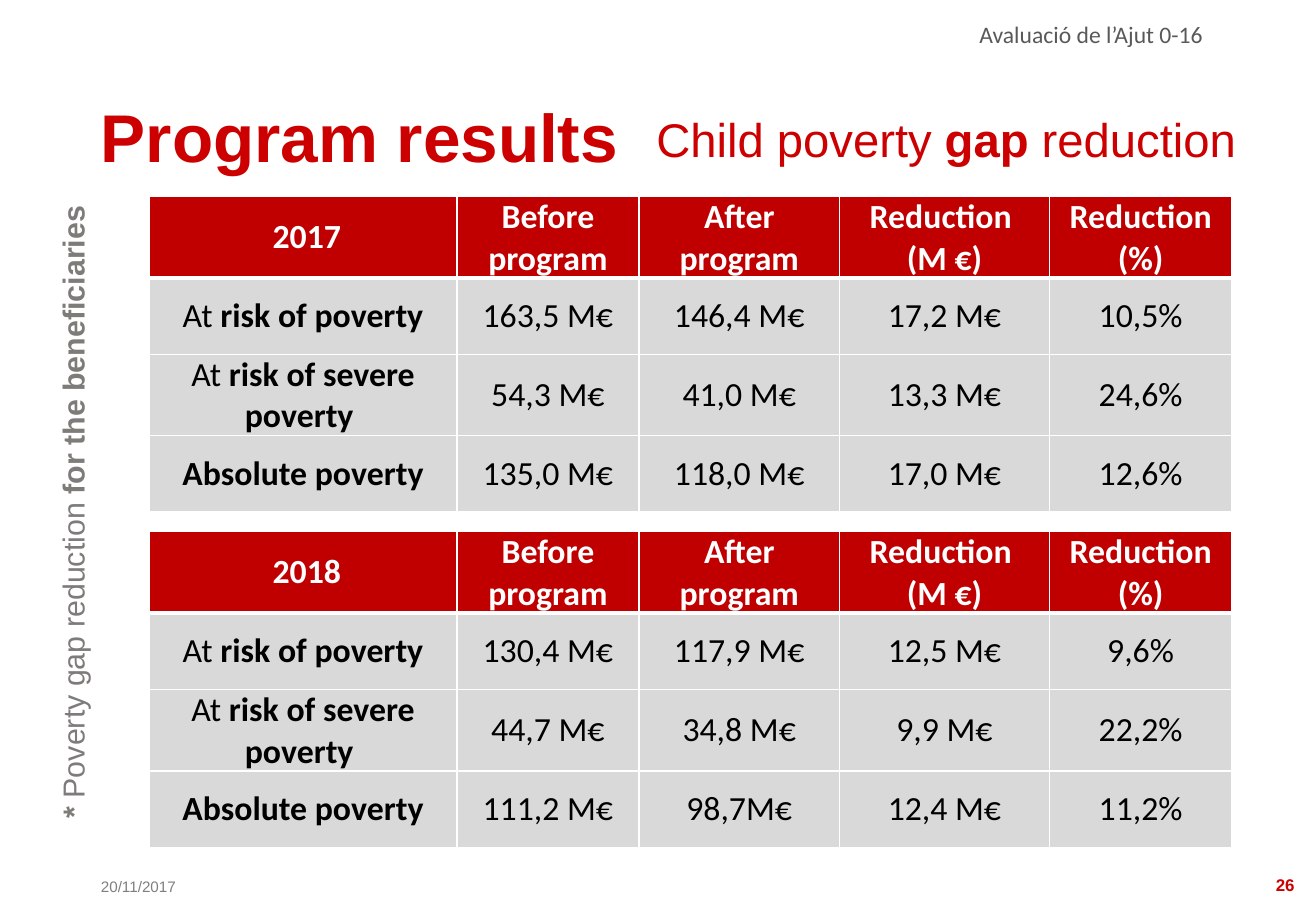
from lxml.etree import SubElement
from pptx import Presentation
from pptx.dml.color import RGBColor
from pptx.enum.shapes import MSO_SHAPE
from pptx.enum.text import MSO_ANCHOR, PP_ALIGN
from pptx.oxml.ns import qn
from pptx.util import Cm, Pt

RED, DARK_RED, LIGHT_GREY = "CC0000", "C00000", "D9D9D9"
WHITE, BLACK = "FFFFFF", "000000"

COLUMN_WIDTHS = (6.43, 3.81, 4.19, 4.39, 3.81)
ROW_HEIGHTS = (1.7, 1.6, 1.7, 1.6)
COLUMN_TITLES = ("Before program", "After program", "Reduction \n(M €)", "Reduction (%)")
# Each row label is a list of (text, bold) pieces
ROW_LABELS = (
    [("At ", False), ("risk of poverty", True)],
    [("At ", False), ("risk of severe poverty ", True)],
    [("Absolute poverty", True)],
)
RESULTS = {
    " 2017": (
        ("163,5 M€", "146,4 M€", "17,2 M€", "10,5%"),
        ("54,3 M€", "41,0 M€", "13,3 M€", "24,6%"),
        ("135,0 M€", "118,0 M€", "17,0 M€", "12,6%"),
    ),
    " 2018": (
        ("130,4 M€", "117,9 M€", "12,5 M€", "9,6%"),
        ("44,7 M€", "34,8 M€", "9,9 M€", "22,2%"),
        ("111,2 M€", "98,7M€", "12,4 M€", "11,2%"),
    ),
}


def color(hex_value):
    return RGBColor.from_string(hex_value)


def write_paragraph(paragraph, pieces, size, hex_value, font, align):
    paragraph.alignment = align
    for text, bold in pieces:
        run = paragraph.add_run()
        run.text = text
        run.font.name = font
        run.font.size = Pt(size)
        run.font.bold = bold
        run.font.color.rgb = color(hex_value)


def set_frame(frame, insets, anchor):
    frame.word_wrap = True
    frame.vertical_anchor = anchor
    (frame.margin_left, frame.margin_top,
     frame.margin_right, frame.margin_bottom) = map(Cm, insets)


def add_label(slide, box, pieces, size, hex_value, font="Arial", align=PP_ALIGN.LEFT,
              insets=(0, 0.13, 0.25, 0.13), anchor=MSO_ANCHOR.TOP):
    label = slide.shapes.add_textbox(*map(Cm, box))
    set_frame(label.text_frame, insets, anchor)
    write_paragraph(label.text_frame.paragraphs[0], pieces, size, hex_value, font, align)
    return label


def add_heading(slide, box, pieces, size, top_inset):
    heading = slide.shapes.add_shape(MSO_SHAPE.RECTANGLE, *map(Cm, box))
    heading.shadow.inherit = False
    heading.fill.solid()
    heading.fill.fore_color.rgb = color(WHITE)
    heading.line.color.rgb = color(WHITE)
    heading.line.width = Pt(0.75)
    set_frame(heading.text_frame, (0, top_inset, 0.25, 0.13), MSO_ANCHOR.TOP)
    write_paragraph(heading.text_frame.paragraphs[0], pieces, size, RED, "Arial", PP_ALIGN.LEFT)


def add_border(cell, side, points):
    border = SubElement(cell._tc.get_or_add_tcPr(), qn(f"a:ln{side}"), w=str(Pt(points)))
    fill = SubElement(border, qn("a:solidFill"))
    SubElement(fill, qn("a:srgbClr"), val=WHITE)


def fill_cell(cell, row, pieces_by_paragraph):
    top = 3 if row == 1 else 1
    bottom = 3 if row == 0 else 1
    for side, points in (("L", 1), ("R", 1), ("T", top), ("B", bottom)):
        add_border(cell, side, points)
    cell.fill.solid()
    cell.fill.fore_color.rgb = color(LIGHT_GREY if row else DARK_RED)
    cell.vertical_anchor = MSO_ANCHOR.MIDDLE
    cell.margin_left = cell.margin_right = Cm(0.18)
    cell.margin_top = cell.margin_bottom = 0
    frame = cell.text_frame
    for index, pieces in enumerate(pieces_by_paragraph):
        paragraph = frame.add_paragraph() if index else frame.paragraphs[0]
        write_paragraph(paragraph, pieces, 20, BLACK if row else WHITE,
                        "Calibri", PP_ALIGN.CENTER)


def add_results_table(slide, left, top, year, year_values):
    results = slide.shapes.add_table(
        len(ROW_HEIGHTS), len(COLUMN_WIDTHS), Cm(left), Cm(top),
        Cm(sum(COLUMN_WIDTHS)), Cm(sum(ROW_HEIGHTS))).table
    for column, width in zip(results.columns, COLUMN_WIDTHS):
        column.width = Cm(width)
    for row, height in zip(results.rows, ROW_HEIGHTS):
        row.height = Cm(height)

    # Header row
    for column, title in enumerate((year, *COLUMN_TITLES)):
        fill_cell(results.cell(0, column), 0, [[(line, True)] for line in title.split("\n")])

    # Poverty levels
    for row, (label, values) in enumerate(zip(ROW_LABELS, year_values), start=1):
        fill_cell(results.cell(row, 0), row, [label])
        for column, value in enumerate(values, start=1):
            fill_cell(results.cell(row, column), row, [[(value, False)]])


def add_page_furniture(slide):
    # Date and page number
    add_label(slide, (2.11, 18.24, 2.34, 0.61), [("20/11/2017", False)], 9, "7F7F7F",
              anchor=MSO_ANCHOR.BOTTOM)
    add_label(slide, (26.04, 18.21, 1.27, 0.64), [("26", True)], 10, RED,
              align=PP_ALIGN.RIGHT, anchor=MSO_ANCHOR.BOTTOM)
    # Running header
    header = add_label(slide, (8.05, 0.64, 17.35, 0.53), [("Avaluació de l’Ajut 0-16", False)],
                       14, "595959", "Calibri", PP_ALIGN.RIGHT, (0.25, 0.22, 0.25, 0.13))
    header.text_frame.paragraphs[0].line_spacing = 0.3


def add_side_note(slide, box):
    note = add_label(slide, box,
                     [("* ", True), ("Poverty gap reduction ", False),
                      ("for the beneficiaries", True)],
                     18, "7E7C78", align=PP_ALIGN.CENTER, insets=(0.1, 0.1, 0.1, 0.1))
    note.rotation = 270


def main():
    presentation = Presentation()
    presentation.slide_width, presentation.slide_height = Cm(27.51), Cm(19.05)
    slide = presentation.slides.add_slide(presentation.slide_layouts[6])

    add_page_furniture(slide)
    for index, (year, year_values) in enumerate(RESULTS.items()):
        add_results_table(slide, 3.12, 4.11 + 7.01 * index, year, year_values)
    add_side_note(slide, (-9.63, 9.35, 24.05, 2.72))

    # Title and subtitle
    add_heading(slide, (2.11, 1.73, 11.63, 1.6), [("Program results", True)], 40, 0.25)
    add_heading(slide, (13.72, 2.13, 12.85, 1.6),
                [("Child poverty ", False), ("gap", True), (" reduction", False)], 28, 0.18)

    presentation.save("out.pptx")


if __name__ == "__main__":
    main()
